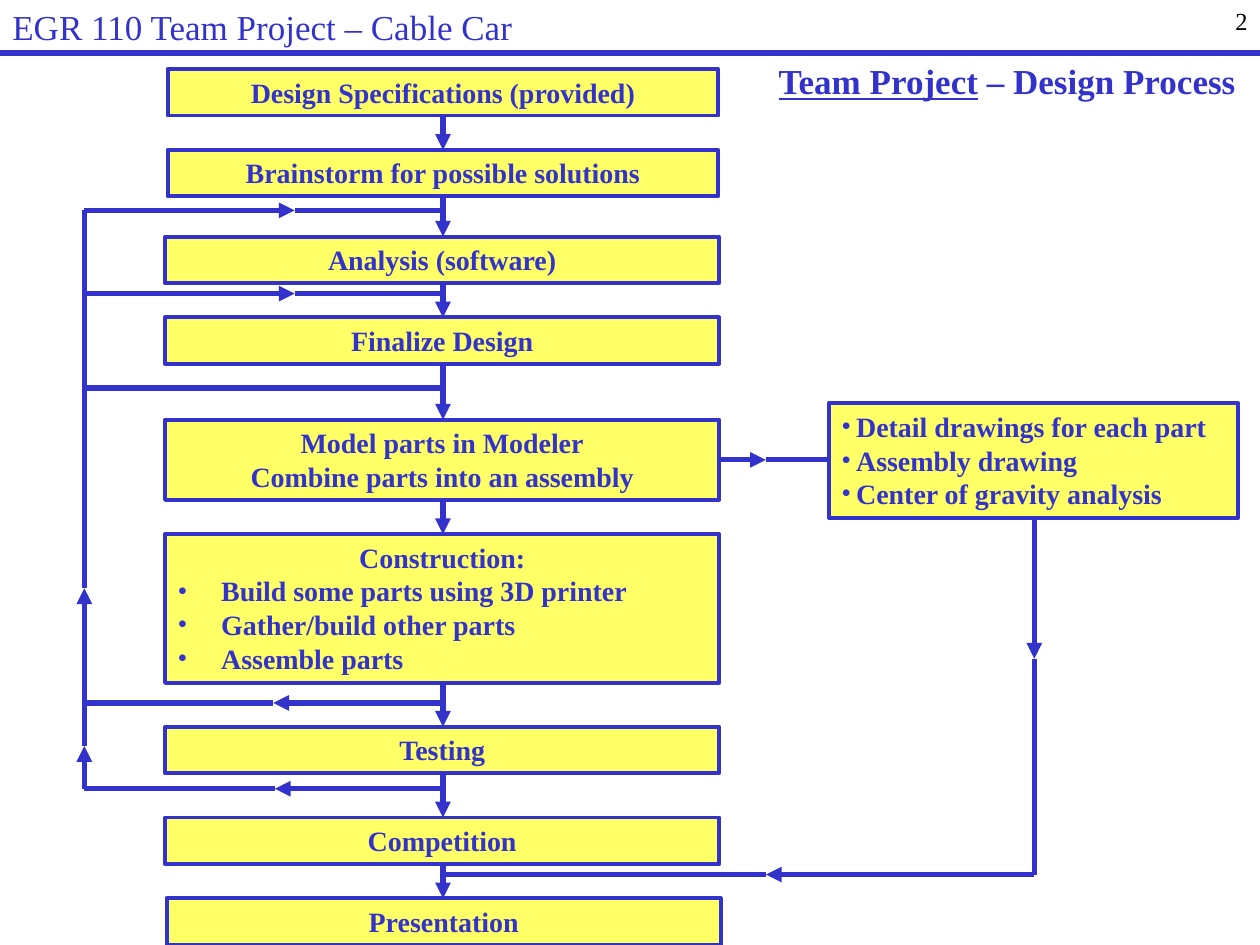
from dataclasses import dataclass

from lxml import etree
from pptx import Presentation
from pptx.dml.color import RGBColor
from pptx.enum.shapes import MSO_CONNECTOR, MSO_SHAPE
from pptx.enum.text import MSO_ANCHOR, MSO_AUTO_SIZE, PP_ALIGN
from pptx.oxml.ns import qn
from pptx.util import Cm, Pt

LEFT, CENTER, RIGHT = PP_ALIGN.LEFT, PP_ALIGN.CENTER, PP_ALIGN.RIGHT
TOP, MIDDLE = MSO_ANCHOR.TOP, MSO_ANCHOR.MIDDLE
TITLE_ONLY = 5


@dataclass(frozen=True)
class Theme:
    font: str = "Times New Roman"
    blue: RGBColor = RGBColor(0x33, 0x33, 0xCC)
    yellow: RGBColor = RGBColor(0xFF, 0xFF, 0x66)
    black: RGBColor = RGBColor(0, 0, 0)
    heading_size: int = 20
    body_size: int = 16
    number_size: int = 14
    border: float = 2.25
    arrow: float = 3


THEME = Theme()

COURSE = "EGR 110 Team Project – Cable Car"
SLIDE_NUMBER = "2"
TITLE_RUNS = ["Team Project", " – Design Process"]

# All lengths below are in centimetres.
WIDTH, HEIGHT = 25.4, 19.05
HEADER = 1.07
BOX_HEIGHTS = {1: 0.94, 2: 1.62, 3: 2.31, 4: 3.0}  # by number of lines

# left, top, width, centred lines, bulleted lines
STEPS = [
    (3.38, 1.39, 11.1, ["Design Specifications (provided)"], []),
    (3.38, 3.02, 11.1, ["Brainstorm for possible solutions"], []),
    (3.33, 4.77, 11.17, ["Analysis (software)"], []),
    (3.33, 6.4, 11.17, ["Finalize Design"], []),
    (3.33, 8.46, 11.17,
     ["Model parts in Modeler", "Combine parts into an assembly"], []),
    (3.33, 10.77, 11.17, ["Construction:"],
     ["Build some parts using 3D printer", "Gather/build other parts",
      "Assemble parts"]),
    (3.33, 14.65, 11.17, ["Testing"], []),
    (3.33, 16.48, 11.17, ["Competition"], []),
    (3.36, 18.11, 11.17, ["Presentation"], []),
]
DRAWINGS = (16.71, 8.13, 8.25, [],
            ["Detail drawings for each part", "Assembly drawing",
             "Center of gravity analysis"])
STEP_INDENT, DRAWINGS_INDENT = 0.88, 0.3

# Horizontal and vertical lanes of the feedback loop and the drawings branch
LOOP_X, MAIN_X, BRANCH_X = 1.7, 8.93, 20.85
TO_ANALYSIS, TO_FINALIZE, TO_MODEL = 4.24, 5.92, 7.82
FROM_CONSTRUCTION, FROM_TESTING = 14.17, 15.9
DRAWINGS_Y, MERGE_Y = 9.27, 17.63

# start, arrow tip along the way, end
FLOWS = [
    ((LOOP_X, TO_ANALYSIS), (5.94, TO_ANALYSIS), (MAIN_X, TO_ANALYSIS)),
    ((LOOP_X, TO_FINALIZE), (5.94, TO_FINALIZE), (MAIN_X, TO_FINALIZE)),
    ((MAIN_X, FROM_CONSTRUCTION), (5.51, FROM_CONSTRUCTION), (LOOP_X, FROM_CONSTRUCTION)),
    ((MAIN_X, FROM_TESTING), (5.54, FROM_TESTING), (LOOP_X, FROM_TESTING)),
    ((LOOP_X, FROM_TESTING), (LOOP_X, 15.04), (LOOP_X, FROM_CONSTRUCTION)),
    ((LOOP_X, FROM_CONSTRUCTION), (LOOP_X, 11.86), (LOOP_X, TO_ANALYSIS)),
    ((14.5, DRAWINGS_Y), (15.44, DRAWINGS_Y), (16.71, DRAWINGS_Y)),
    ((BRANCH_X, 10.44), (BRANCH_X, 13.28), (BRANCH_X, MERGE_Y)),
    ((BRANCH_X, MERGE_Y), (15.44, MERGE_Y), (MAIN_X, MERGE_Y)),
]


def format_paragraph(paragraph, size, color, bold=False, alignment=LEFT):
    paragraph.alignment = alignment
    for run in paragraph.runs:
        run.font.name = THEME.font
        run.font.size = Pt(size)
        run.font.bold = bold
        run.font.color.rgb = color


def add_bullet(paragraph, indent):
    properties = paragraph._p.get_or_add_pPr()
    properties.set("marL", str(Cm(indent)))
    properties.set("indent", str(-Cm(indent)))
    etree.SubElement(properties, qn("a:buFont")).set("typeface", THEME.font)
    etree.SubElement(properties, qn("a:buChar")).set("char", "•")


def add_line(slide, start, end, arrow=False):
    line = slide.shapes.add_connector(
        MSO_CONNECTOR.STRAIGHT, *(Cm(value) for value in (*start, *end)))
    line.line.color.rgb = THEME.blue
    line.line.width = Pt(THEME.arrow)
    if arrow:
        etree.SubElement(line.line._get_or_add_ln(), qn("a:tailEnd")).set("type", "triangle")
    etree.SubElement(line._element.spPr, qn("a:effectLst"))


def add_label(slide, text, left, width, size, color, alignment, anchor):
    label = slide.shapes.add_textbox(Cm(left), 0, Cm(width), Cm(HEADER))
    frame = label.text_frame
    frame.word_wrap = True
    frame.vertical_anchor = anchor
    frame.text = text
    format_paragraph(frame.paragraphs[0], size, color, alignment=alignment)
    return frame.paragraphs[0]


def add_box(slide, left, top, width, centred, bulleted, indent):
    lines = centred + bulleted
    box = slide.shapes.add_shape(
        MSO_SHAPE.RECTANGLE, Cm(left), Cm(top), Cm(width), Cm(BOX_HEIGHTS[len(lines)]))
    box.shadow.inherit = False
    box.fill.solid()
    box.fill.fore_color.rgb = THEME.yellow
    box.line.color.rgb = THEME.blue
    box.line.width = Pt(THEME.border)
    frame = box.text_frame
    frame.word_wrap = True
    frame.vertical_anchor = TOP
    frame.text = "\n".join(lines)
    for index, paragraph in enumerate(frame.paragraphs):
        is_bullet = index >= len(centred)
        format_paragraph(paragraph, THEME.body_size, THEME.blue, bold=True,
                         alignment=LEFT if is_bullet else CENTER)
        if is_bullet:
            add_bullet(paragraph, indent)


def format_title(title):
    title.left, title.top, title.width, title.height = Cm(15.44), Cm(HEADER), Cm(9.96), Cm(1.12)
    frame = title.text_frame
    frame.auto_size = MSO_AUTO_SIZE.NONE
    frame.word_wrap = True
    frame.vertical_anchor = MIDDLE
    paragraph = frame.paragraphs[0]
    for text in TITLE_RUNS:
        paragraph.add_run().text = text
    format_paragraph(paragraph, THEME.heading_size, THEME.blue, bold=True)
    paragraph.runs[0].font.underline = True


def main():
    presentation = Presentation()
    presentation.slide_width, presentation.slide_height = Cm(WIDTH), Cm(HEIGHT)
    slide = presentation.slides.add_slide(presentation.slide_layouts[TITLE_ONLY])

    add_label(slide, SLIDE_NUMBER, 24.05, 1.35, THEME.number_size, THEME.black, RIGHT, TOP)
    add_line(slide, (0, HEADER), (WIDTH, HEADER))
    course = add_label(slide, COURSE, 0, 20.12, THEME.heading_size, THEME.blue, LEFT, MIDDLE)
    course.space_before = Pt(4)
    format_title(slide.shapes.title)

    for step in STEPS:
        add_box(slide, *step, STEP_INDENT)
    add_box(slide, *DRAWINGS, DRAWINGS_INDENT)

    for (_, top, _, centred, bulleted), following in zip(STEPS, STEPS[1:]):
        bottom = top + BOX_HEIGHTS[len(centred + bulleted)]
        add_line(slide, (MAIN_X, bottom), (MAIN_X, following[1]), arrow=True)

    for start, tip, end in FLOWS:
        add_line(slide, start, tip, arrow=True)
        add_line(slide, tip, end)
    add_line(slide, (MAIN_X, TO_MODEL), (LOOP_X, TO_MODEL))

    presentation.save("out.pptx")


if __name__ == "__main__":
    main()
